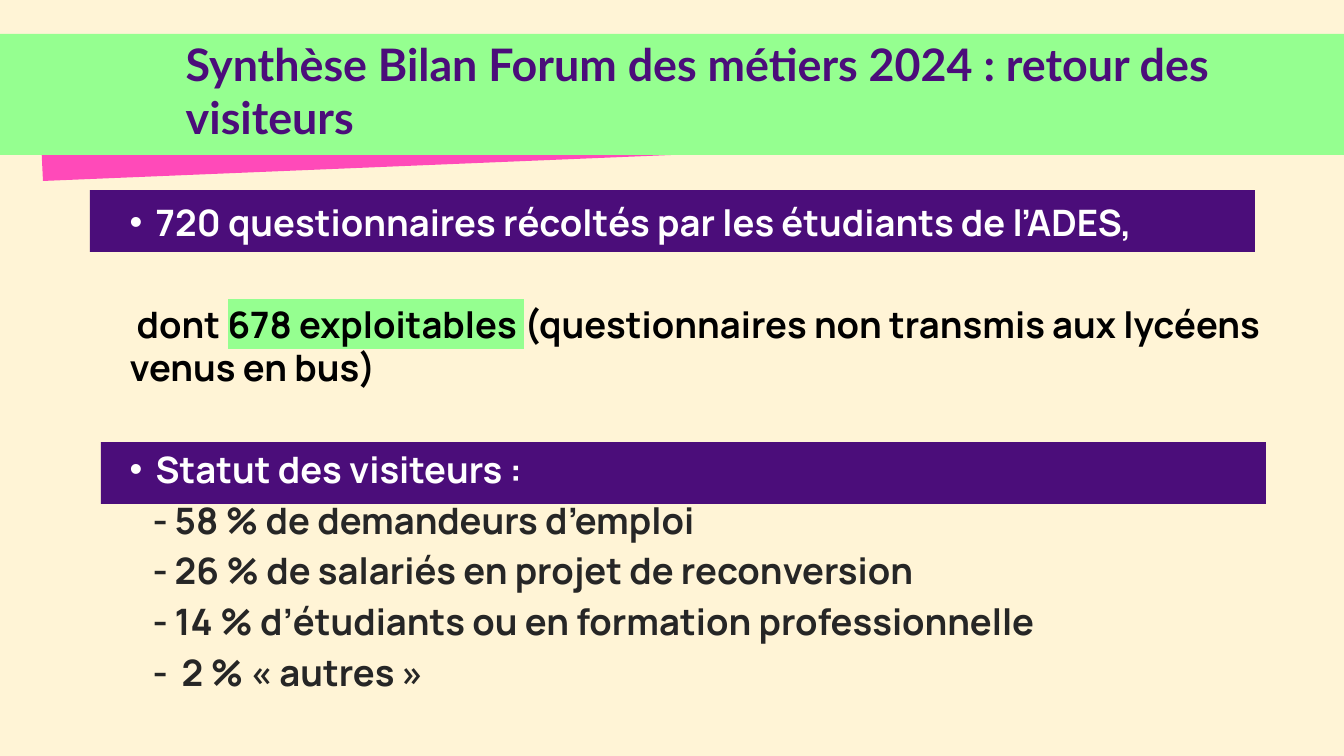
from lxml import etree
from pptx import Presentation
from pptx import util as u
from pptx.dml.color import RGBColor
from pptx.enum import shapes, text
from pptx.oxml import ns

# Content
TITLE = "Synthèse Bilan Forum des métiers 2024 : retour des visiteurs"
HEADING, NOTE, ITEM, SHORT_ITEM = "heading", "note", "item", "short item"
HIGHLIGHTED = "678 exploitables "
BODY = [
    (HEADING, ["720 questionnaires récoltés par les étudiants de l’ADES,"]),
    (NOTE, ["dont ", HIGHLIGHTED,
            "(questionnaires non transmis aux lycéens venus en bus)"]),
    (HEADING, ["Statut des visiteurs :"]),
    (ITEM, ["-\t58 % de demandeurs d’emploi"]),
    (ITEM, ["-\t26 % de salariés en projet de reconversion"]),
    (ITEM, ["-\t14 % d’étudiants ou en formation professionnelle"]),
    (SHORT_ITEM, ["-\t2 % « autres »"]),
]

# Style
COLOURS = {"cream": "FFF4D6", "pink": "FF4AB9", "green": "95FF90",
           "purple": "4B0D7A", "white": "FFFFFF", "black": "000000",
           "grey": "262626"}
# kind: colour, left margin px, first-line indent px, bullet, space before pt
STYLES = {HEADING: ("white", 26, -26, "•", 62),
          NOTE: ("black", 0, 7, None, 62),
          ITEM: ("grey", 45, -22, None, 7.5),
          SHORT_ITEM: ("grey", 52, -29, None, 7.5)}

# Geometry in px
PX = 914400 / 67.2
SLIDE = (1344, 756)
PINK_BAND = [(39, 97), (1322, 44), (1325, 128), (43, 181)]
BARS = [((-15, 34, 1416, 121), "green"),
        ((101, 442, 1165, 62), "purple"),
        ((90, 190, 1165, 62), "purple")]
TITLE_BOX = (179, 33, 1042, 116)
BODY_BOX = (123, 197, 1221, 520)


def emu(px):
    return u.Emu(round(px * PX))


def rgb(name):
    return RGBColor.from_string(COLOURS[name])


def paint(shape, colour):
    shape.shadow.inherit = False
    shape.fill.solid()
    shape.fill.fore_color.rgb = rgb(colour)
    shape.line.fill.background()


def place(placeholder, box):
    """Move a placeholder and bring it in front of the bands."""
    placeholder.left, placeholder.top, placeholder.width, placeholder.height = map(emu, box)
    tree = placeholder.element.getparent()
    tree.append(placeholder.element)
    frame = placeholder.text_frame
    frame.word_wrap = True
    frame.auto_size = text.MSO_AUTO_SIZE.NONE
    frame.vertical_anchor = text.MSO_ANCHOR.TOP
    return frame


def format_run(run, font_name, size, colour):
    run.font.size = u.Pt(size)
    run.font.bold = True
    run.font.color.rgb = rgb(colour)
    run.font.name = font_name


def set_bullet(paragraph, margin, indent, bullet):
    properties = paragraph._p.get_or_add_pPr()
    properties.set("marL", str(emu(margin)))
    properties.set("indent", str(emu(indent)))
    if bullet:
        etree.SubElement(properties, ns.qn("a:buChar"), char=bullet)
    else:
        etree.SubElement(properties, ns.qn("a:buNone"))


def highlight(run, colour):
    fill = run._r.get_or_add_rPr().find(ns.qn("a:solidFill"))
    mark = etree.Element(ns.qn("a:highlight"))
    etree.SubElement(mark, ns.qn("a:srgbClr"), val=COLOURS[colour])
    fill.addnext(mark)


def fill_paragraph(paragraph, kind, parts, first):
    colour, margin, indent, bullet, space = STYLES[kind]
    set_bullet(paragraph, margin, indent, bullet)
    paragraph.space_before = u.Pt(0 if first else space)
    for part in parts:
        run = paragraph.add_run()
        run.text = part
        format_run(run, "Manrope", 39, colour)
        if part == HIGHLIGHTED:
            highlight(run, "green")


def main():
    presentation = Presentation()
    presentation.slide_width, presentation.slide_height = map(emu, SLIDE)
    slide = presentation.slides.add_slide(presentation.slide_layouts[1])
    slide.background.fill.solid()
    slide.background.fill.fore_color.rgb = rgb("cream")

    # Bands behind the text
    builder = slide.shapes.build_freeform(*PINK_BAND[0], scale=PX)
    builder.add_line_segments(PINK_BAND[1:], close=True)
    paint(builder.convert_to_shape(), "pink")
    for box, colour in BARS:
        paint(slide.shapes.add_shape(shapes.MSO_SHAPE.RECTANGLE, *map(emu, box)), colour)

    # Findings
    frame = place(slide.placeholders[1], BODY_BOX)
    for index, (kind, parts) in enumerate(BODY):
        paragraph = frame.add_paragraph() if index else frame.paragraphs[0]
        fill_paragraph(paragraph, kind, parts, first=index == 0)

    # Title
    frame = place(slide.shapes.title, TITLE_BOX)
    frame.text = TITLE
    frame.paragraphs[0].alignment = text.PP_ALIGN.LEFT
    format_run(frame.paragraphs[0].runs[0], "Lato", 48, "purple")

    presentation.save("out.pptx")


if __name__ == "__main__":
    main()
